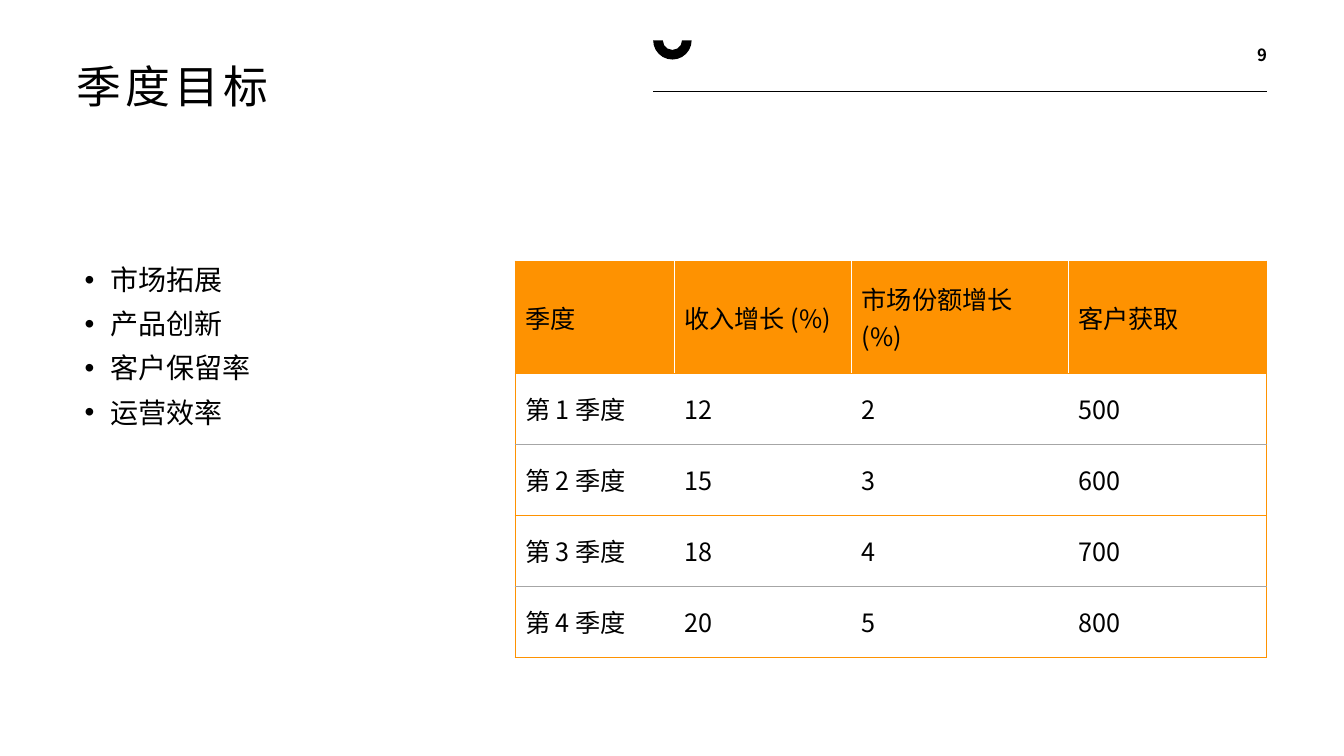
"""Build the quarterly goals slide with a bullet list and a table."""
import lxml.etree
import pptx
import pptx.dml.color
import pptx.enum.shapes
import pptx.enum.text
import pptx.oxml.ns
import pptx.util

Cm = pptx.util.Cm
Pt = pptx.util.Pt
qn = pptx.oxml.ns.qn
Anchor = pptx.enum.text.MSO_ANCHOR
Align = pptx.enum.text.PP_ALIGN
Shape = pptx.enum.shapes.MSO_SHAPE

COLOURS = {"ink": "000000", "paper": "FFFFFF", "accent": "FE9201", "rule": "A6A6A6"}
GOALS = ["市场拓展", "产品创新", "客户保留率", "运营效率"]
HEADINGS = ["季度", "收入增长 (%)", "市场份额增长 (%)", "客户获取"]
RESULTS = [(12, 2, 500), (15, 3, 600), (18, 4, 700), (20, 5, 800)]


def rgb(name):
    """Return the named colour."""
    return pptx.dml.color.RGBColor.from_string(COLOURS[name])


class SlideBuilder:
    """Hold the font and the current page, and add styled elements to it."""

    def __init__(self, page, font):
        self.page = page
        self.font = font

    def style(self, para, size, bold=False, tracking=0):
        """Set the font of a whole paragraph."""
        para.font.size = Pt(size)
        para.font.bold = bold
        para.font.name = self.font
        para.font.color.rgb = rgb("ink")
        properties = para._p.get_or_add_pPr().get_or_add_defRPr()
        properties.set("spc", str(tracking * 100))
        east_asian = lxml.etree.SubElement(properties, qn("a:ea"))
        east_asian.set("typeface", self.font)

    def place(self, box, left, top, width, height):
        """Move and size a box given in centimetres."""
        box.left, box.top = Cm(left), Cm(top)
        box.width, box.height = Cm(width), Cm(height)
        box.text_frame.word_wrap = True
        box.text_frame.auto_size = pptx.enum.text.MSO_AUTO_SIZE.NONE

    def title(self, text, *bounds):
        """Fill the title placeholder."""
        box = self.page.shapes.title
        self.place(box, *bounds)
        frame = box.text_frame
        frame.text = text
        frame.margin_left = 0
        frame.vertical_anchor = Anchor.TOP
        para = frame.paragraphs[0]
        para.alignment = Align.LEFT
        para.line_spacing = 0.9
        self.style(para, 32, tracking=3)

    def bullets(self, items, *bounds):
        """Fill the body placeholder with a bullet list."""
        box = self.page.placeholders[1]
        self.place(box, *bounds)
        box.text_frame.text = "\n".join(items)
        for para in box.text_frame.paragraphs:
            para.line_spacing = 0.9
            para.space_before = Pt(10)
            self.style(para, 20)
            properties = para._p.get_or_add_pPr()
            indent = Cm(0.64)
            properties.set("marL", str(indent))
            properties.set("indent", str(-indent))

    def page_number(self, text, *bounds):
        """Add a bold page number aligned to the right."""
        box = self.page.shapes.add_textbox(0, 0, 0, 0)
        self.place(box, *bounds)
        frame = box.text_frame
        frame.text = text
        frame.margin_left = frame.margin_right = 0
        frame.vertical_anchor = Anchor.BOTTOM
        frame.paragraphs[0].alignment = Align.RIGHT
        self.style(frame.paragraphs[0], 12, bold=True)

    def rule(self, left, right, top):
        """Add a thin horizontal line."""
        line = self.page.shapes.add_connector(
            pptx.enum.shapes.MSO_CONNECTOR.STRAIGHT, Cm(left), Cm(top), Cm(right), Cm(top))
        line.line.color.rgb = rgb("ink")
        line.line.width = Pt(0.75)
        lxml.etree.SubElement(line._element.spPr, qn("a:effectLst"))

    def half_ring(self, left, top, size):
        """Add a half ring that opens upwards."""
        ring = self.page.shapes.add_shape(
            Shape.BLOCK_ARC, Cm(left), Cm(top), Cm(size), Cm(size))
        ring.rotation = 180
        ring.shadow.inherit = False
        ring.fill.solid()
        ring.fill.fore_color.rgb = rgb("ink")
        ring.line.fill.background()

    def border(self, cell, edges):
        """Draw the given cell edges, a dict of tag to colour name."""
        properties = cell._tc.get_or_add_tcPr()
        for position, (tag, colour) in enumerate(edges.items()):
            edge = lxml.etree.Element(qn(tag), w=str(Pt(0.75)))
            fill = lxml.etree.SubElement(edge, qn("a:solidFill"))
            lxml.etree.SubElement(fill, qn("a:srgbClr"), val=COLOURS[colour])
            properties.insert(position, edge)

    def table(self, rows, left, top, widths, heights):
        """Add a table with a filled heading row and thin row lines."""
        grid = self.page.shapes.add_table(
            len(rows), len(widths), Cm(left), Cm(top),
            Cm(sum(widths)), Cm(sum(heights))).table
        for column, width in zip(grid.columns, widths):
            column.width = Cm(width)
        for row, height in zip(grid.rows, heights):
            row.height = Cm(height)
        lines = ["accent" if index % 2 == 0 else "rule" for index in range(len(rows))]
        for r, values in enumerate(rows):
            for c, value in enumerate(values):
                cell = grid.cell(r, c)
                cell.text = str(value)
                cell.vertical_anchor = Anchor.MIDDLE
                cell.fill.solid()
                cell.fill.fore_color.rgb = rgb("paper" if r else "accent")
                self.style(cell.text_frame.paragraphs[0], 18)
                edges = {}
                if c == 0:
                    edges["a:lnL"] = "accent"
                if c == len(values) - 1:
                    edges["a:lnR"] = "accent"
                edges["a:lnT"] = lines[max(r - 1, 0)]
                edges["a:lnB"] = lines[r]
                self.border(cell, edges)


def main():
    """Build and save the deck."""
    deck = pptx.Presentation()
    deck.slide_width, deck.slide_height = Cm(33.87), Cm(19.05)
    page = deck.slides.add_slide(deck.slide_layouts[1])
    builder = SlideBuilder(page, "Noto Sans CJK SC")
    builder.rule(16.46, 31.93, 2.31)
    builder.half_ring(16.46, 0.53, 0.97)
    builder.title("季度目标", 1.93, 1.5, 13.84, 5.03)
    builder.page_number("9", 30.96, 0.43, 0.97, 1.32)
    builder.bullets(GOALS, 1.88, 6.58, 9.83, 9.96)
    quarters = [(f"第 {number} 季度", *result) for number, result in enumerate(RESULTS, 1)]
    builder.table([HEADINGS, *quarters], 12.98, 6.58,
                  [4.01, 4.47, 5.46, 5.0], [2.82] + [1.79] * len(quarters))
    deck.save("out.pptx")


if __name__ == "__main__":
    main()
